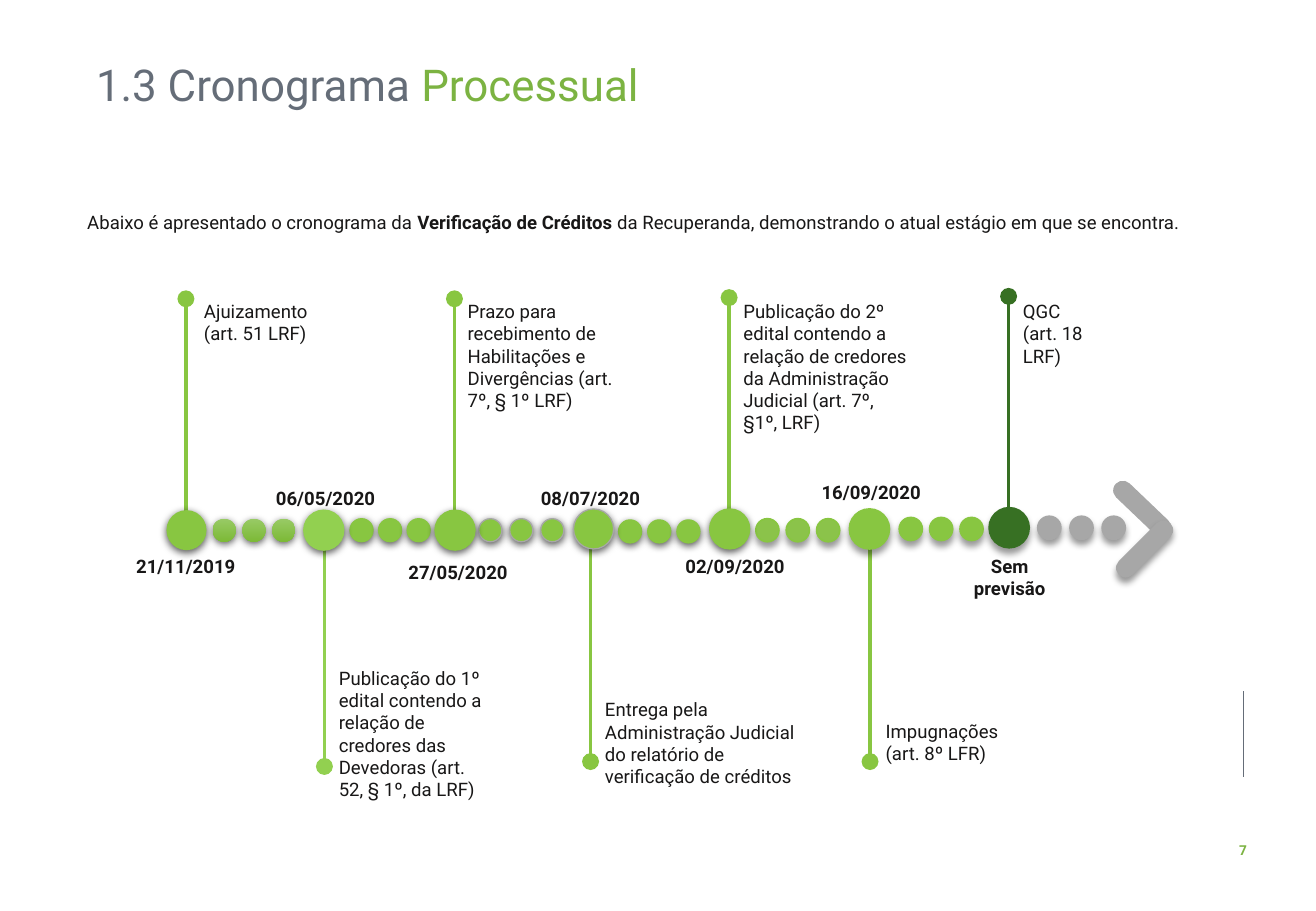
from collections import namedtuple
from lxml import etree
from pptx import Presentation, util as u
from pptx.dml.color import RGBColor
from pptx.enum import shapes, text
from pptx.oxml.ns import qn

PX = 9144


class Theme:
    font = "Roboto"
    title, body, number = 26, 11, 8.1
    ink, slate, accent = "181717", "656D78", "7CB342"
    green, light, bead, dark, grey = "88C641", "92D050", "8BC34A", "377023", "A7A7A7"
    gradient = ("98CA65", "7CB936")
    strong = (63, 4.5, 1.5)
    soft = (40, 4, 3)


Milestone = namedtuple(
    "Milestone", "left top stem tip fill line width shadow date date_x date_y label label_at lines")
Gap = namedtuple("Gap", "first last top fill line width shadow")

TITLE = [("1.3 Cronograma ", Theme.slate), ("Processual", Theme.accent)]
INTRO = [("Abaixo é apresentado o cronograma da ", False),
         ("Verificação de Créditos ", True),
         ("da Recuperanda, demonstrando o atual estágio em que se encontra.", False)]
PAGE_NUMBER = "7"

MILESTONES = [
    Milestone(137, 420, 153, 246, Theme.green, None, 0, Theme.strong, "21/11/2019", 153, 452,
              ["Ajuizamento (art. 51 LRF)"], (158, 242, 112), 2),
    Milestone(250, 420, 267, 631, Theme.light, Theme.light, 0.75, Theme.strong, "06/05/2020", 268, 396,
              ["Publicação do 1º edital contendo a relação de credores das Devedoras (art. 52, § 1º, da LRF)"],
              (269, 544, 143), 6),
    Milestone(358, 420, 374, 246, Theme.green, Theme.green, 0.75, Theme.strong, "27/05/2020", 377, 457,
              ["Prazo para recebimento de Habilitações e Divergências (art. 7º, § 1º LRF)"],
              (375, 242, 160), 5),
    Milestone(472, 419, 486, 627, Theme.green, Theme.grey, 0.75, Theme.strong, "08/07/2020", 486, 396,
              ["Entrega pela Administração Judicial do relatório de verificação de créditos"],
              (488, 570, 178), 4),
    Milestone(584, 419, 600, 245, Theme.green, Theme.green, 0.75, Theme.strong, "02/09/2020", 605, 452,
              ["Publicação do 2º edital contendo a relação de credores da Administração Judicial "
               "(art. 7º, §1º, LRF)"], (602, 242, 157), 6),
    Milestone(699, 419, 716, 627, Theme.green, Theme.green, 1, Theme.soft, "16/09/2020", 717, 391,
              ["Impugnações (art. 8º LFR)"], (719, 588, 124), 2),
    Milestone(814, 418, 830, 244, Theme.dark, Theme.dark, 1, Theme.soft, "Sem previsão", 831, 452,
              ["QGC", "(art. 18 LRF)"], (832, 242, 79), 3),
]
GAPS = [
    Gap(175, 224, 427, Theme.gradient, None, 0, Theme.strong),
    Gap(288, 335, 427, Theme.green, Theme.green, 0.75, Theme.strong),
    Gap(394, 445, 427, Theme.green, Theme.grey, 0.75, Theme.strong),
    Gap(509, 557, 428, Theme.green, Theme.green, 0.75, Theme.strong),
    Gap(622, 672, 427, Theme.bead, Theme.green, 1, Theme.soft),
    Gap(740, 790, 426, Theme.green, Theme.green, 1, Theme.soft),
    Gap(854, 907, 425, Theme.grey, Theme.grey, 1, Theme.soft),
]
ARROW_BARS = [(910, 411, 43.7, None), (912, 444, 315, Theme.soft)]
NODE, BEAD, BEADS_PER_GAP = 33, 19, 3
BAR_WIDTH, BAR_HEIGHT = 60, 16
DATE_WIDTH, LINE_HEIGHT, PADDING = 106, 18, 10


def px(*lengths):
    return [round(length * PX) for length in lengths]


def rgb(value):
    return RGBColor.from_string(value)


def add_span(para, words, size, color=Theme.ink, bold=False):
    span = para.add_run()
    span.text = words
    span.font.name = Theme.font
    span.font.size = u.Pt(size)
    span.font.bold = bold
    span.font.color.rgb = rgb(color)


def add_box(page, left, top, width, height):
    box = page.shapes.add_textbox(*px(left, top, width, height))
    box.text_frame.word_wrap = True
    return box.text_frame


def add_line(page, x1, y1, x2, y2, color, width):
    line = page.shapes.add_connector(shapes.MSO_CONNECTOR.STRAIGHT, *px(x1, y1, x2, y2))
    line.line.color.rgb = rgb(color)
    line.line.width = u.Pt(width)
    etree.SubElement(line._element.spPr, qn("a:effectLst"))
    return line


def add_shadow(shape, alpha, blur, distance):
    effects = shape._element.spPr.find(qn("a:effectLst"))
    shadow = etree.SubElement(effects, qn("a:outerShdw"), blurRad=str(u.Pt(blur)),
                              dist=str(u.Pt(distance)), dir="5400000", rotWithShape="0")
    color = etree.SubElement(shadow, qn("a:srgbClr"), val="000000")
    etree.SubElement(color, qn("a:alpha"), val=str(alpha * 1000))


def add_solid(page, kind, left, top, width, height, fill, line, line_width, shadow):
    shape = page.shapes.add_shape(kind, *px(left, top, width, height))
    shape.shadow.inherit = False
    if isinstance(fill, tuple):
        shape.fill.gradient()
        shape.fill.gradient_angle = 270
        for stop, color in zip(shape.fill.gradient_stops, fill):
            stop.color.rgb = rgb(color)
    else:
        shape.fill.solid()
        shape.fill.fore_color.rgb = rgb(fill)
    if line:
        shape.line.color.rgb = rgb(line)
        shape.line.width = u.Pt(line_width)
    else:
        shape.line.fill.background()
    if shadow:
        add_shadow(shape, *shadow)
    return shape


def add_header(page):
    title = page.shapes.title
    title.left, title.top, title.width, title.height = px(69, 45, 818, 53)
    title.text_frame.vertical_anchor = text.MSO_ANCHOR.MIDDLE
    para = title.text_frame.paragraphs[0]
    para.alignment = text.PP_ALIGN.LEFT
    para.line_spacing = 0.9
    for words, color in TITLE:
        add_span(para, words, Theme.title, color)

    para = add_box(page, 31, 166, 1017, 30).paragraphs[0]
    para.alignment = text.PP_ALIGN.JUSTIFY
    para.line_spacing = 1.14
    para._p.get_or_add_pPr().set("indent", str(px(31)[0]))
    for words, bold in INTRO:
        add_span(para, words, Theme.body, bold=bold)


def add_footer(page):
    add_line(page, 1023, 569, 1023, 640, Theme.slate, 0.5)
    para = add_box(page, 1006, 688, 34, 24).paragraphs[0]
    para.alignment = text.PP_ALIGN.CENTER
    add_span(para, PAGE_NUMBER, Theme.number, Theme.accent, True)


def add_timeline(page):
    oval = shapes.MSO_SHAPE.OVAL
    for item in MILESTONES:
        stem = add_line(page, item.stem, item.tip, item.stem, item.top + NODE // 2, item.fill, 2)
        etree.SubElement(stem.line._get_or_add_ln(), qn("a:headEnd"), type="oval", w="lg", len="lg")
    for gap in GAPS:
        pitch = (gap.last - gap.first) / (BEADS_PER_GAP - 1)
        for index in range(BEADS_PER_GAP):
            add_solid(page, oval, gap.first + index * pitch, gap.top, BEAD, BEAD,
                      gap.fill, gap.line, gap.width, gap.shadow)
    for item in MILESTONES:
        add_solid(page, oval, item.left, item.top, NODE, NODE,
                  item.fill, item.line, item.width, item.shadow)
    for left, top, angle, shadow in ARROW_BARS:
        bar = add_solid(page, shapes.MSO_SHAPE.ROUNDED_RECTANGLE, left, top, BAR_WIDTH, BAR_HEIGHT,
                        Theme.grey, None, 0, shadow)
        bar.adjustments[0] = 0.5
        bar.rotation = angle


def add_labels(page):
    for item in MILESTONES:
        date_left = item.date_x - DATE_WIDTH / 2
        para = add_box(page, date_left, item.date_y, DATE_WIDTH, 29).paragraphs[0]
        para.alignment = text.PP_ALIGN.CENTER
        add_span(para, item.date, Theme.body, bold=True)
        frame = add_box(page, *item.label_at, item.lines * LINE_HEIGHT + PADDING)
        for index, words in enumerate(item.label):
            para = frame.add_paragraph() if index else frame.paragraphs[0]
            add_span(para, words, Theme.body)


def main():
    deck = Presentation()
    deck.slide_width, deck.slide_height = px(1083, 750)
    page = deck.slides.add_slide(deck.slide_layouts[5])
    add_header(page)
    add_timeline(page)
    add_labels(page)
    add_footer(page)
    deck.save("out.pptx")


if __name__ == "__main__":
    main()
